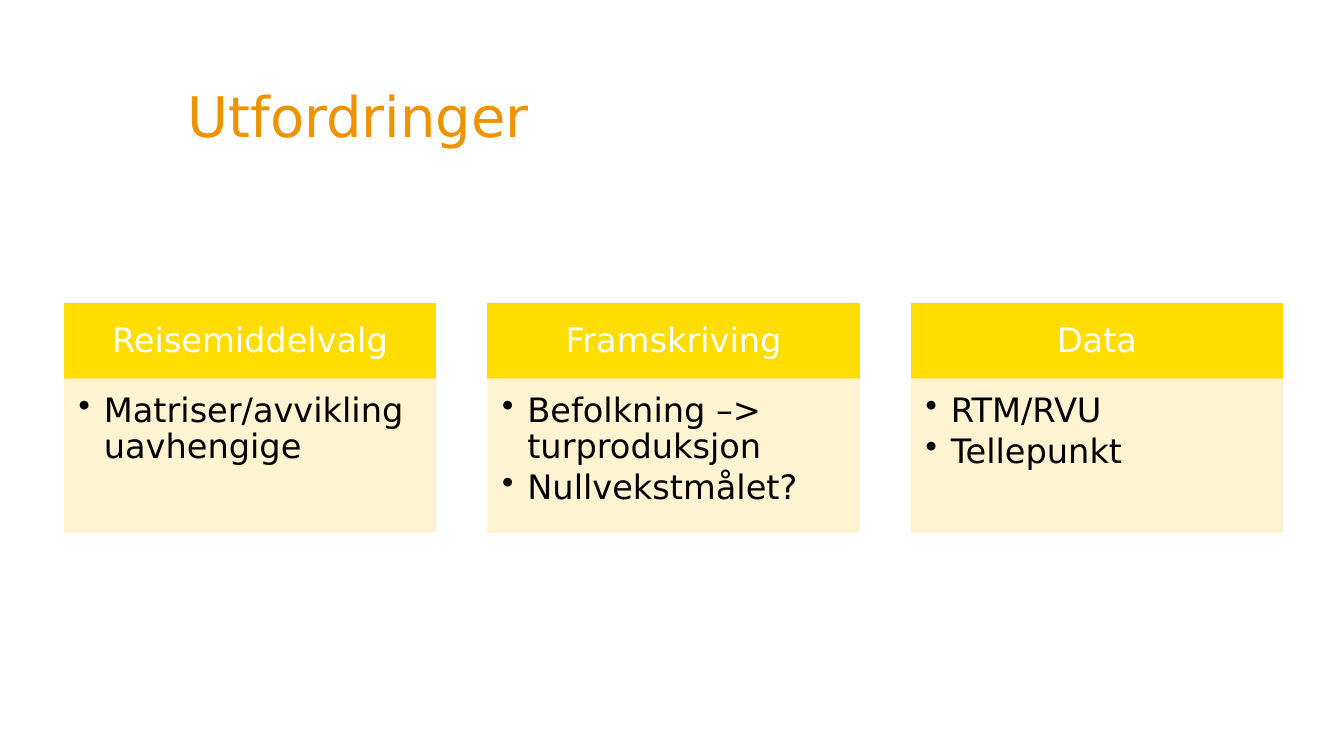
from pptx import Presentation
from pptx.dml.color import RGBColor
from pptx.enum.shapes import MSO_SHAPE as Shape
from pptx.enum.text import MSO_ANCHOR as Anchor, MSO_AUTO_SIZE as AutoSize, PP_ALIGN as Align
from pptx.oxml.ns import qn
from pptx.util import Pt
from lxml.etree import SubElement

PX = 9144  # 100 px to the inch
FONT = "DejaVu Sans"
COLORS = {"title": "ED9300", "header": "FFDD00", "body": "FFF2CC",
          "light": "FFFFFF", "dark": "000000"}
LEFT, TOP, WIDTH, PITCH = 64, 301, 368, 420
HEADER_HEIGHT, BODY_HEIGHT = 75, 152
COLUMNS = [
    ("Reisemiddelvalg", ["Matriser/avvikling uavhengige"]),
    ("Framskriving", ["Befolkning –> turproduksjon", "Nullvekstmålet?"]),
    ("Data", ["RTM/RVU", "Tellepunkt"]),
]


def set_frame(frame, anchor, insets):
    frame.word_wrap = True
    frame.auto_size = AutoSize.NONE
    frame.vertical_anchor = anchor
    (frame.margin_left, frame.margin_top,
     frame.margin_right, frame.margin_bottom) = [inset * PX for inset in insets]


def add_text(para, text, size, color):
    span = para.add_run()
    span.text = text
    span.font.name = FONT
    span.font.size = Pt(size)
    span.font.color.rgb = RGBColor.from_string(COLORS[color])


deck = Presentation()
deck.slide_width, deck.slide_height = 1333 * PX, 750 * PX
page = deck.slides.add_slide(deck.slide_layouts[5])

# Title
title = page.shapes.title
title.left, title.top, title.width, title.height = 186 * PX, 76 * PX, 946 * PX, 39 * PX
set_frame(title.text_frame, Anchor.TOP, (0, 5, 0, 0))
title_para = title.text_frame.paragraphs[0]
title_para.alignment = Align.LEFT
add_text(title_para, "Utfordringer", 40, "title")

# Three columns, each a header over a bulleted body
for index, (heading, bullets) in enumerate(COLUMNS):
    left = LEFT + index * PITCH
    parts = [
        ("header", TOP, HEADER_HEIGHT, Anchor.MIDDLE, (19, 11, 19, 11), [heading]),
        ("body", TOP + HEADER_HEIGHT, BODY_HEIGHT, Anchor.TOP, (14, 14, 19, 21), bullets),
    ]
    for part, top, height, anchor, insets, lines in parts:
        box = page.shapes.add_shape(Shape.RECTANGLE, left * PX, top * PX, WIDTH * PX, height * PX)
        box.shadow.inherit = False
        box.fill.solid()
        box.line.fill.solid()
        box.line.width = Pt(1)
        for paint in (box.fill, box.line.fill):
            paint.fore_color.rgb = RGBColor.from_string(COLORS[part])
        set_frame(box.text_frame, anchor, insets)

        if part == "body":
            # Fill and outline are 90 % opaque
            for color in box._element.spPr.iter(qn("a:srgbClr")):
                SubElement(color, qn("a:alpha"), val="90000")

        for number, line in enumerate(lines):
            para = box.text_frame.paragraphs[0] if number == 0 else box.text_frame.add_paragraph()
            para.line_spacing = 0.9
            if part == "header":
                para.alignment = Align.CENTER
                add_text(para, line, 24, "light")
            else:
                para.alignment = Align.LEFT
                para.space_after = Pt(3.6)
                properties = para._p.get_or_add_pPr()
                properties.set("marL", str(25 * PX))
                properties.set("indent", str(-25 * PX))
                SubElement(properties, qn("a:buChar"), char="•")
                add_text(para, line, 24, "dark")

deck.save("out.pptx")
